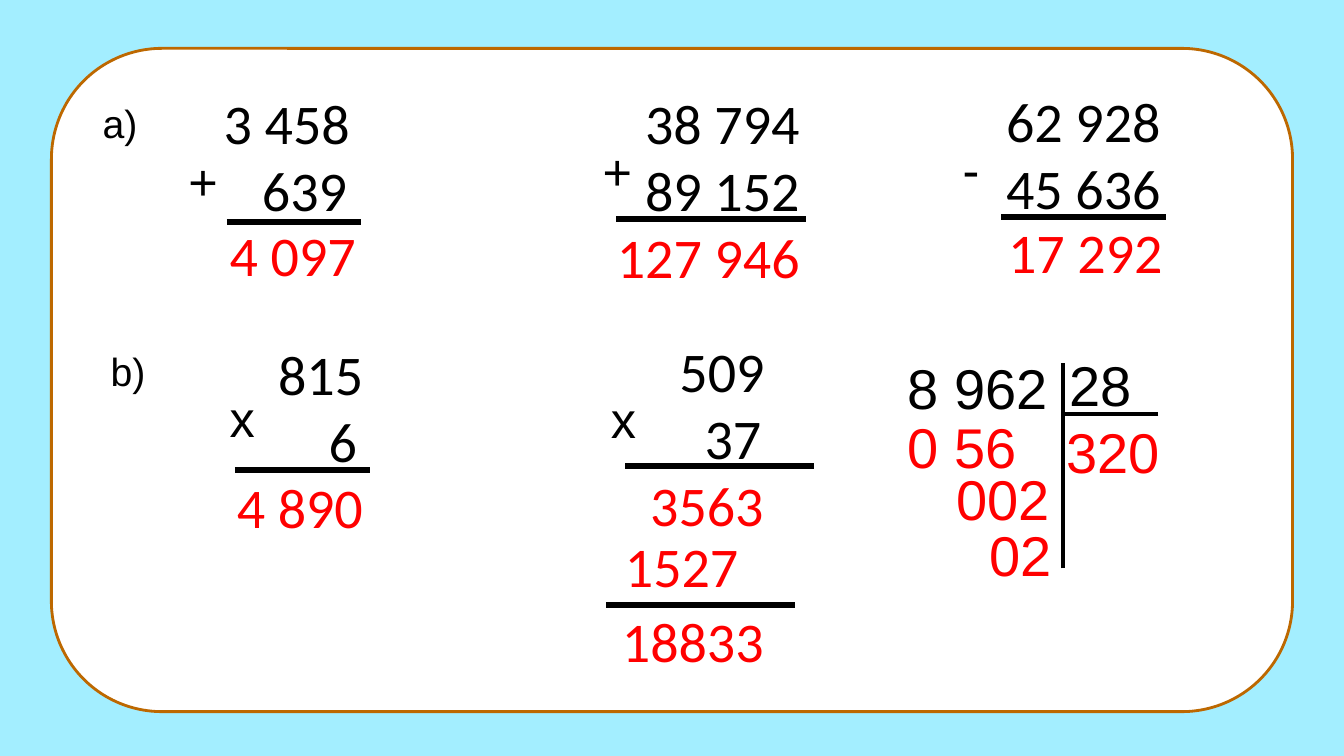
"""Build a slide of worked sums, products and a long division."""
from dataclasses import dataclass
from pptx import Presentation
from pptx.dml.color import RGBColor as Rgb
from pptx.enum.shapes import MSO_CONNECTOR as Link, MSO_SHAPE as Shape
from pptx.enum.text import MSO_AUTO_SIZE as Fit, PP_ALIGN as Align
from pptx.oxml.ns import qn
from pptx.util import Inches, Pt
from lxml.etree import SubElement as add_sub


@dataclass(frozen=True)
class Theme:
    """Colours, fonts and type sizes."""
    sky: str = "A3EEFF"
    card: str = "FFFFFF"
    rim: str = "BD6800"
    ink: str = "000000"
    red: str = "FF0000"
    sans: str = "Arial"
    digit: str = "Calibri"
    big: int = 40
    mid: int = 36
    small: int = 28


class Board:
    """Draw the parts of one slide in one style."""

    def __init__(self, slide, theme):
        """Keep the slide and theme, and paint the background."""
        self.slide, self.theme = slide, theme
        fill = slide.background.fill
        fill.solid()
        fill.fore_color.rgb = Rgb.from_string(theme.sky)

    def card(self, x, y, w, h):
        """Draw the rounded card."""
        card = self.slide.shapes.add_shape(
            Shape.ROUNDED_RECTANGLE, *map(Inches, (x, y, w, h)))
        card.shadow.inherit = False
        card.fill.solid()
        card.fill.fore_color.rgb = Rgb.from_string(self.theme.card)
        card.line.color.rgb = Rgb.from_string(self.theme.rim)
        card.line.width = Pt(2)

    def rule(self, x, y, to_x, to_y, width=4.5):
        """Draw a straight rule."""
        rule = self.slide.shapes.add_connector(
            Link.STRAIGHT, *map(Inches, (x, y, to_x, to_y)))
        rule.line.color.rgb = Rgb.from_string(self.theme.ink)
        rule.line.width = Pt(width)
        add_sub(rule._element.spPr, qn("a:effectLst"))

    def text(self, text, x, y, w, h, *, size=None, font=None, color=None,
             align=None, inset=True, indents=(0, 0)):
        """Write lines of text, each with its own left indent."""
        box = self.slide.shapes.add_textbox(*map(Inches, (x, y, w, h)))
        frame = box.text_frame
        frame.word_wrap = True
        frame.auto_size = Fit.SHAPE_TO_FIT_TEXT
        if not inset:
            frame.margin_left = frame.margin_right = 0
            frame.margin_top = frame.margin_bottom = 0
        frame.text = text
        for line, indent in zip(frame.paragraphs, indents):
            if indent:
                line._p.get_or_add_pPr().set("marL", str(Inches(indent)))
            if align is not None:
                line.alignment = align
            style = line.runs[0].font
            style.name = font or self.theme.digit
            style.size = Pt(size or self.theme.big)
            style.color.rgb = Rgb.from_string(color or self.theme.ink)

    def label(self, text, x, y):
        """Write the letter of a row."""
        self.text(text, x, y, 0.76, 0.57, size=self.theme.small,
                  font=self.theme.sans)

    def sign(self, text, x, y):
        """Write the sign of a sum."""
        self.text(text, x, y, 0.66, 0.71, size=self.theme.mid,
                  font=self.theme.sans)

    def answer(self, text, x, y):
        """Write a red result."""
        self.text(text, x, y, 3.08, 0.77, color=self.theme.red)

    def sum(self, terms, spot, indents, sign, mark, bar, reply, place):
        """Write two terms, their sign, a bar and the result."""
        self.text(terms, *spot, 3.08, 1.45, indents=indents)
        self.sign(sign, *mark)
        x, y, length = bar
        self.rule(x, y, x + length, y)
        self.answer(reply, *place)

    def step(self, text, x, y, w=2.05, color=None):
        """Write one right-aligned part of the division."""
        self.text(text, x, y, w, 0.67, font=self.theme.sans, color=color,
                  align=Align.RIGHT, inset=False)


SUMS = [
    ("3 458\n639", (2.12, 0.83), (0, 0.38), "+", (1.77, 1.44),
     (2.25, 2.2, 1.33), "4 097", (2.18, 2.14)),
    ("38 794\n89 152", (6.3, 0.83), (0, 0), "+", (5.88, 1.34),
     (6.11, 2.17, 1.88), "127 946", (6.02, 2.16)),
    ("62 928\n45 636", (9.88, 0.81), (0, 0), "-", (9.45, 1.32),
     (9.93, 2.15, 1.63), "17 292", (9.9, 2.11)),
    ("815\n6", (2.28, 3.32), (0.38, 0.88), "x", (2.18, 3.79),
     (2.33, 4.66, 1.34), "4 890", (2.25, 4.64)),
    ("509\n37", (6.39, 3.29), (0.25, 0.5), "x", (5.96, 3.8),
     (6.2, 4.62, 1.87), "3563", (6.35, 4.62)),
]
STEPS = [("0 56", 8.03, 4.09), ("002", 8.36, 4.61), ("02", 8.38, 5.16),
         ("320", 9.45, 4.14)]


def main():
    """Build and save the slide."""
    deck = Presentation()
    deck.slide_width, deck.slide_height = Inches(13.33), Inches(7.5)
    theme = Theme()
    board = Board(deck.slides.add_slide(deck.slide_layouts[6]), theme)
    board.card(0.51, 0.48, 12.31, 6.58)
    board.label("a)", 0.92, 0.94)
    board.label("b)", 1, 3.4)
    for item in SUMS:
        board.sum(*item)
    board.answer("1527", 6.1, 5.22)
    board.rule(6.01, 6, 7.89, 6)
    board.answer("18833", 6.07, 5.97)
    board.step("8 962", 7.97, 3.51, 2.42)
    board.step("28", 10.03, 3.48, 1.19)
    board.rule(10.54, 5.64, 10.54, 3.6, 3)
    board.rule(11.49, 4.11, 10.54, 4.11, 3)
    for step in STEPS:
        board.step(*step, color=theme.red)
    deck.save("out.pptx")


if __name__ == "__main__":
    main()
